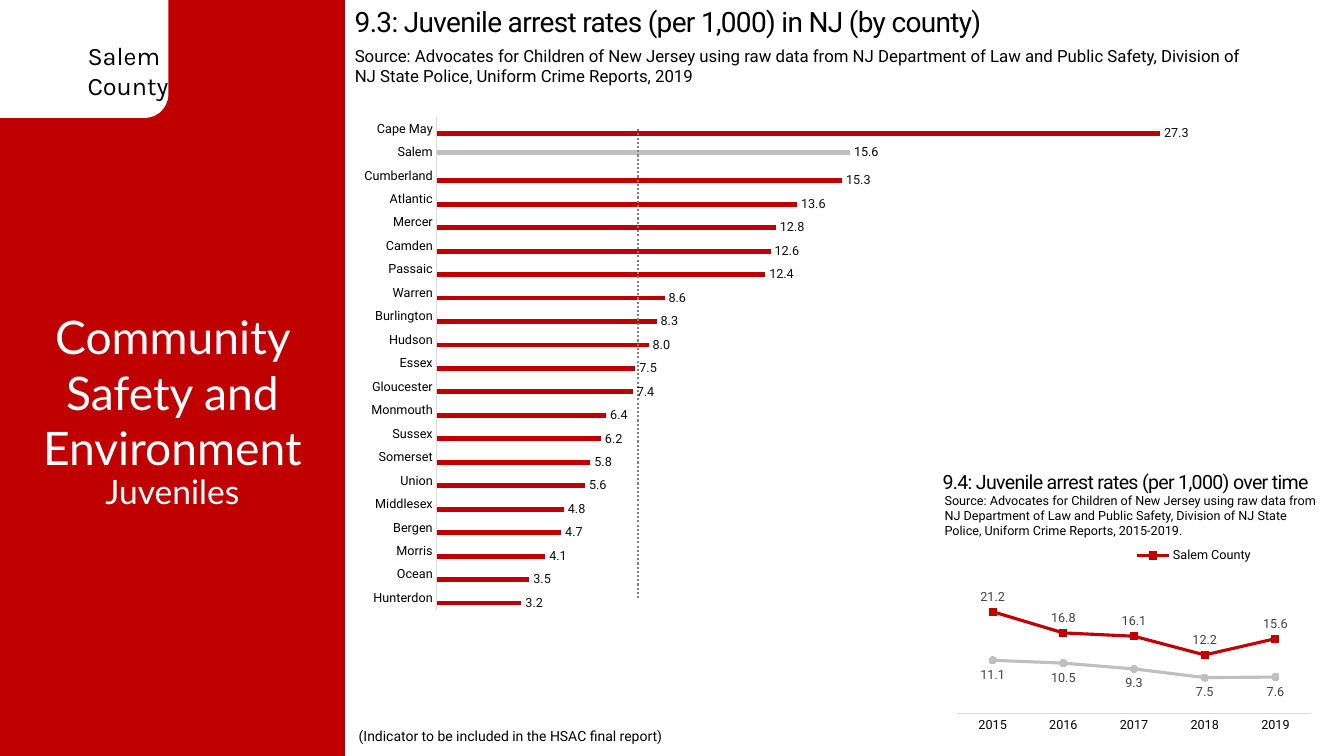
from lxml import etree
from pptx import Presentation
from pptx.chart.data import CategoryChartData
from pptx.dml.color import RGBColor
from pptx.enum.chart import XL_CHART_TYPE as Kind, XL_LABEL_POSITION as Pos
from pptx.enum.chart import XL_LEGEND_POSITION as Side, XL_MARKER_STYLE as Mark, XL_TICK_MARK as Tick
from pptx.enum.shapes import MSO_SHAPE as Geo
from pptx.enum.text import MSO_ANCHOR as Anchor, PP_ALIGN as Align
from pptx.oxml import parse_xml
from pptx.oxml.ns import nsdecls, qn
from pptx.util import Inches, Pt

# Content
TITLE = "Community Safety and Environment"
BASE = ("Source: Advocates for Children of New Jersey using raw data from NJ Department of "
        "Law and Public Safety, Division of NJ State Police, Uniform Crime Reports, ")
RATES = [
    ("Hunterdon", 3.2), ("Ocean", 3.5), ("Morris", 4.1), ("Bergen", 4.7),
    ("Middlesex", 4.8), ("Union", 5.6), ("Somerset", 5.8), ("Sussex", 6.2),
    ("Monmouth", 6.4), ("Gloucester", 7.4), ("Essex", 7.5), ("Hudson", 8.0),
    ("Burlington", 8.3), ("Warren", 8.6), ("Passaic", 12.4), ("Camden", 12.6),
    ("Mercer", 12.8), ("Atlantic", 13.6), ("Cumberland", 15.3), ("Salem", 15.6),
    ("Cape May", 27.3),
]
HOME, STATE = "Salem", 7.6
YEARS = ["2015", "2016", "2017", "2018", "2019"]
TRENDS = {"Salem County": [21.2, 16.8, 16.1, 12.2, 15.6],
          "New Jersey": [11.1, 10.5, 9.3, 7.5, 7.6]}
COLORS = {"red": "C00000", "white": "FFFFFF", "black": "000000", "ink": "0D0D0D",
          "gray": "BFBFBF", "rule": "D9D9D9", "mid": "404040", "dots": "808080"}

# text, box, size, font, color, alignment, letter spacing
TEXTS = [
    ("Salem\nCounty", (0.77, 0.35, 1, 0.71), 18, "Karla", "black", Align.LEFT, 0),
    ("Juveniles", (0, 4.62, 3.42, 0.5), 24, "Lato", "white", Align.CENTER, 0),
    ("9.3: Juvenile arrest rates (per 1,000) in NJ (by county)",
     (3.42, 0, 9.86, 0.44), 20, "Roboto", "black", Align.LEFT, -50),
    (BASE + "2019", (3.42, 0.4, 9.19, 0.5), 12, "Roboto", "black", Align.LEFT, 0),
    ("9.4: Juvenile arrest rates (per 1,000) over time",
     (9.25, 4.61, 3.92, 0.34), 14, "Roboto", "black", Align.LEFT, -50),
    (BASE + "2015-2019.", (9.27, 4.84, 3.94, 0.56), 9, "Roboto", "black", Align.LEFT, 0),
    ("(Indicator to be included in the HSAC final report)",
     (3.46, 7.08, 9, 0.45), 10, "Roboto", "black", Align.JUSTIFY, 0),
]


def tint(name):
    return RGBColor.from_string(COLORS[name])


def place(shape, box):
    shape.left, shape.top, shape.width, shape.height = map(Inches, box)


def style(font, size, color, face="Roboto"):
    font.size, font.name, font.color.rgb = Pt(size), face, tint(color)


def block(geo, box, color):
    shape = slide.shapes.add_shape(geo, *map(Inches, box))
    shape.shadow.inherit = False
    shape.fill.solid()
    shape.fill.fore_color.rgb = tint(color)
    shape.line.fill.background()


def write(shape, text, size, face, color, align, gap=0):
    frame = shape.text_frame
    frame.word_wrap = True
    frame.vertical_anchor = Anchor.TOP
    frame.text = text
    for para in frame.paragraphs:
        para.alignment, para.line_spacing = align, 1.0
        for run in para.runs:
            style(run.font, size, color, face)
            if gap:
                run.font._element.set("spc", str(gap))


def layout(box, inner=False):
    node = etree.Element(qn("c:layout"))
    man = etree.SubElement(node, qn("c:manualLayout"))
    parts = [("layoutTarget", "inner")] if inner else []
    parts += [("xMode", "edge"), ("yMode", "edge"), *zip("xywh", box)]
    for tag, val in parts:
        etree.SubElement(man, qn("c:" + tag)).set("val", str(val))
    return node


def drop(parent, tag):
    for node in parent.findall(qn(tag)):
        parent.remove(node)


def graph(kind, box, plot, cats, series, top):
    data = CategoryChartData(number_format="#,##0.0")
    data.categories = cats
    for name, vals in series.items():
        data.add_series(name, vals)
    chart = slide.shapes.add_chart(kind, *map(Inches, box), data).chart
    style(chart.font, 10, "black", "Calibri")
    chart.has_title = chart.has_legend = False
    chart.plots[0].vary_by_categories = False
    val, cat = chart.value_axis, chart.category_axis
    val.minimum_scale, val.maximum_scale = 0, top
    val.has_major_gridlines = val.visible = False
    cat.major_tick_mark = cat.minor_tick_mark = Tick.NONE
    style(cat.tick_labels.font, 9, "black")
    cat.format.line.color.rgb = tint("rule")
    cat.format.line.width = Pt(0.75)
    area = chart._chartSpace.chart.plotArea
    drop(area, "c:layout")
    area.insert(0, layout(plot, True))
    return chart


def label(ser, pos, color):
    tags = ser.data_labels
    tags.show_value, tags.position = True, pos
    tags.number_format, tags.number_format_is_linked = "#,##0.0", False
    style(tags.font, 9, color)


# Slide and side panel
prs = Presentation()
prs.slide_width, prs.slide_height = Inches(13.33), Inches(7.5)
slide = prs.slides.add_slide(prs.slide_layouts[5])
block(Geo.RECTANGLE, (0, 0, 3.42, 7.5), "red")
block(Geo.ROUNDED_RECTANGLE, (-0.33, -0.25, 2, 1.42), "white")

# Texts
for text, box, *look in TEXTS:
    shape = slide.shapes.add_textbox(*map(Inches, box))
    write(shape, text, *look)
shape.text_frame.vertical_anchor = Anchor.MIDDLE

# County bars with the state average as a dotted line
names = [name for name, _ in RATES]
bars = graph(Kind.BAR_CLUSTERED, (3.46, 1.08, 8.89, 5.5), (0.098, 0.015, 0.887, 0.889), names, {
    "Rate per 1,000 youth": [None if name == HOME else rate for name, rate in RATES],
    "Series 2": [rate if name == HOME else None for name, rate in RATES],
    "Series 3": [STATE] * len(RATES),
}, 30)
bars.plots[0].gap_width = 182
rest, home, state = bars.plots[0].series
for ser, color, ink in ((rest, "red", "ink"), (home, "gray", "black")):
    ser.format.fill.solid()
    ser.format.fill.fore_color.rgb = tint(color)
    label(ser, Pos.OUTSIDE_END, ink)
state.format.fill.background()
state._element.find(qn("c:cat")).addprevious(parse_xml(
    f'<c:trendline {nsdecls("c", "a")}><c:spPr><a:ln w="19050"><a:solidFill>'
    f'<a:srgbClr val="{COLORS["dots"]}"/></a:solidFill><a:prstDash val="sysDot"/></a:ln></c:spPr>'
    '<c:trendlineType val="linear"/><c:dispRSqr val="0"/><c:dispEq val="0"/></c:trendline>'))

# Rates over time
lines = graph(Kind.LINE_MARKERS, (9.33, 5.39, 3.75, 2.02), (0.044, 0.081, 0.935, 0.756),
              YEARS, TRENDS, 32)
looks = [("red", Mark.SQUARE, Pos.ABOVE), ("gray", Mark.CIRCLE, Pos.BELOW)]
for ser, (color, mark, pos) in zip(lines.plots[0].series, looks):
    ser.smooth = False
    ser.format.line.color.rgb = tint(color)
    ser.format.line.width = Pt(2.25)
    ser.marker.style, ser.marker.size = mark, 5
    ser.marker.format.fill.solid()
    ser.marker.format.fill.fore_color.rgb = tint(color)
    ser.marker.format.line.color.rgb = tint(color)
    label(ser, pos, "mid")

# Legend with the county only
lines.has_legend = True
key = lines.legend
key.position, key.include_in_layout = Side.RIGHT, False
style(key.font, 9, "black")
drop(key._element, "c:layout")
spot = key._element.find(qn("c:legendPos"))
spot.addnext(layout((0.5, 0.01, 0.34, 0.1)))
spot.addnext(parse_xml(f'<c:legendEntry {nsdecls("c")}><c:idx val="1"/>'
                       '<c:delete val="1"/></c:legendEntry>'))

# Title, in front of the panel
title = slide.shapes.title
place(title, (0, 3.01, 3.42, 1.77))
write(title, TITLE, 33, "Lato", "white", Align.CENTER)
slide.shapes._spTree.append(title._element)

prs.save("out.pptx")
